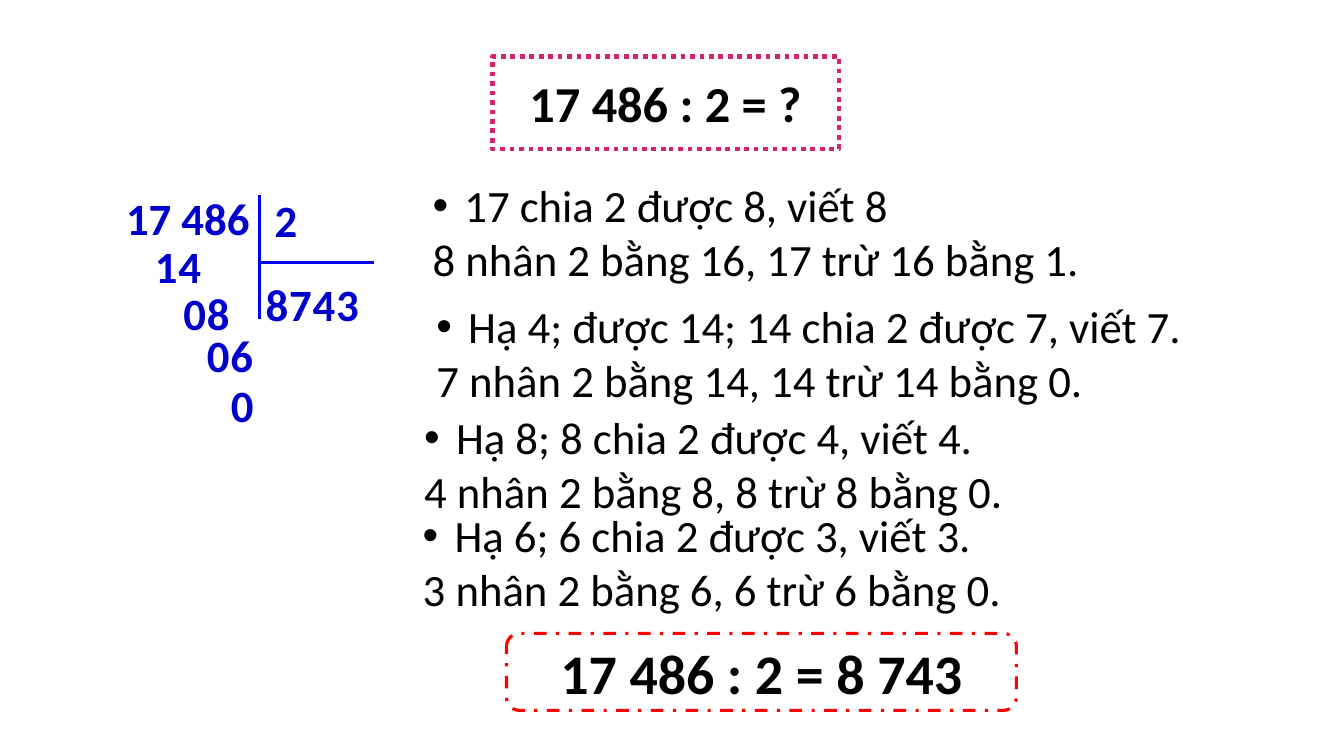
from lxml import etree
from pptx import Presentation
from pptx.dml.color import RGBColor
from pptx.enum.dml import MSO_LINE
from pptx.enum.shapes import MSO_CONNECTOR, MSO_SHAPE
from pptx.enum.text import MSO_ANCHOR, MSO_AUTO_SIZE, PP_ALIGN
from pptx.oxml.ns import qn
from pptx.util import Cm, Pt

DOT, DASH = MSO_LINE.ROUND_DOT, MSO_LINE.DASH_DOT
STRAIGHT = MSO_CONNECTOR.STRAIGHT
ROUND = MSO_SHAPE.ROUNDED_RECTANGLE
TOP, MIDDLE = MSO_ANCHOR.TOP, MSO_ANCHOR.MIDDLE
NONE = MSO_AUTO_SIZE.NONE
LEFT, CENTER = PP_ALIGN.LEFT, PP_ALIGN.CENTER

HEX = {"ink": "000000", "digit": "0000CC", "rule": "0000FF",
       "ask": "D0246E", "answer": "FF0000", "paper": "FFFFFF"}
STEP = {"name": "Calibri", "size": Pt(42.7), "bold": False}
DIGIT = {**STEP, "bold": True}
ASK = {**DIGIT, "size": Pt(48)}
ANSWER = {**DIGIT, "size": Pt(53.3)}
FLUSH = {"margin_left": 0, "margin_top": 0, "margin_right": 0,
         "margin_bottom": 0, "word_wrap": True, "auto_size": NONE,
         "vertical_anchor": TOP}
FRAMED = {"word_wrap": True, "auto_size": NONE, "vertical_anchor": MIDDLE}

STEPS = [
    ((14.55, 5.99, 22.5, 3.66), "17 chia 2 được 8, viết 8",
     "8 nhân 2 bằng 16, 17 trừ 16 bằng 1."),
    ((14.68, 10.06, 30.5, 3.66), "Hạ 4; được 14; 14 chia 2 được 7, viết 7.",
     "7 nhân 2 bằng 14, 14 trừ 14 bằng 0."),
    ((14.27, 13.79, 29.9, 3.66), "Hạ 8; 8 chia 2 được 4, viết 4.",
     "4 nhân 2 bằng 8, 8 trừ 8 bằng 0."),
    ((14.22, 17.09, 29.9, 3.66), "Hạ 6; 6 chia 2 được 3, viết 3.",
     "3 nhân 2 bằng 6, 6 trừ 6 bằng 0."),
]
ROWS = [("14", 0.97, 1.6), ("08", 1.93, 3.2), ("06", 2.72, 4.6),
        ("0", 3.53, 6.27), ("8743", 4.7, 2.87)]
PITCH = 0.79


def color(key):
    return RGBColor.from_string(HEX[key])


def apply(item, values):
    for name, value in values.items():
        setattr(item, name, value)


def place(shape, box):
    apply(shape, dict(zip(("left", "top", "width", "height"), map(Cm, box))))


def write(para, text, form, ink="ink", align=LEFT):
    para.text = text
    apply(para, {"alignment": align, "space_before": Pt(0), "line_spacing": 1.0})
    apply(para.font, form)
    para.font.color.rgb = color(ink)


def frame(shape, text, form, key, width, dash):
    shape.fill.solid()
    shape.fill.fore_color.rgb = color("paper")
    shape.line.color.rgb = color(key)
    apply(shape.line, {"width": Pt(width), "dash_style": dash})
    apply(shape.text_frame, FRAMED)
    write(shape.text_frame.paragraphs[0], text, form, align=CENTER)


def add_ask(slide, box):
    title = slide.shapes.title
    place(title, box)
    geom = etree.SubElement(title.element.spPr, qn("a:prstGeom"), prst="roundRect")
    guides = etree.SubElement(geom, qn("a:avLst"))
    etree.SubElement(guides, qn("a:gd"), name="adj", fmla="val 24500")
    frame(title, "17 486 : 2 = ?", ASK, "ask", 4.5, DOT)


def add_answer(slide, box):
    shape = slide.shapes.add_shape(ROUND, *map(Cm, box))
    shape.shadow.inherit = False
    frame(shape, "17 486 : 2 = 8 743", ANSWER, "answer", 3, DASH)


def add_step(body, box, head, work):
    place(body, box)
    apply(body.text_frame, FLUSH)
    first = body.text_frame.paragraphs[0]
    props = first._p.get_or_add_pPr()
    props.set("marL", str(Cm(1.07)))
    props.set("indent", str(-Cm(1.07)))
    etree.SubElement(props, qn("a:buFont"), typeface="Arial")
    etree.SubElement(props, qn("a:buChar"), char="•")
    write(first, head, STEP)
    second = body.text_frame.add_paragraph()
    props = second._p.get_or_add_pPr()
    props.set("marL", "0")
    props.set("indent", "0")
    etree.SubElement(props, qn("a:buNone"))
    write(second, work, STEP)


def add_digits(slide, text, x, y, width=1.42):
    box = slide.shapes.add_textbox(Cm(x), Cm(y), Cm(width), Cm(2.08))
    box.text_frame.word_wrap = True
    write(box.text_frame.paragraphs[0], text, DIGIT, "digit")


def add_rule(slide, *ends):
    rule = slide.shapes.add_connector(STRAIGHT, *map(Cm, ends))
    rule.line.color.rgb = color("rule")
    rule.line.width = Pt(3)
    etree.SubElement(rule._element.spPr, qn("a:effectLst"))


def add_division(slide, x, y):
    add_digits(slide, "17 486", x, y, 6.99)
    add_digits(slide, "2", x + 5, y + 0.05)
    add_rule(slide, x + 4.7, y + 2.54, x + 8.59, y + 2.54)
    add_rule(slide, x + 4.75, y + 0.25, x + 4.75, y + 4.42)
    for text, left, top in ROWS:
        for spot, digit in enumerate(text):
            add_digits(slide, digit, x + left + spot * PITCH, y + top)


def main():
    deck = Presentation()
    apply(deck, {"slide_width": Cm(45.21), "slide_height": Cm(25.4)})
    slide = deck.slides.add_slide(deck.slide_layouts.get_by_name("Comparison"))
    add_ask(slide, (16.56, 1.91, 11.66, 3.1))
    add_division(slide, 3.99, 6.3)
    bodies = list(slide.placeholders)[1:]
    for body, (box, head, work) in zip(bodies, STEPS):
        add_step(body, box, head, work)
    add_answer(slide, (17.04, 21.31, 17.15, 2.59))
    deck.save("out.pptx")


if __name__ == "__main__":
    main()
